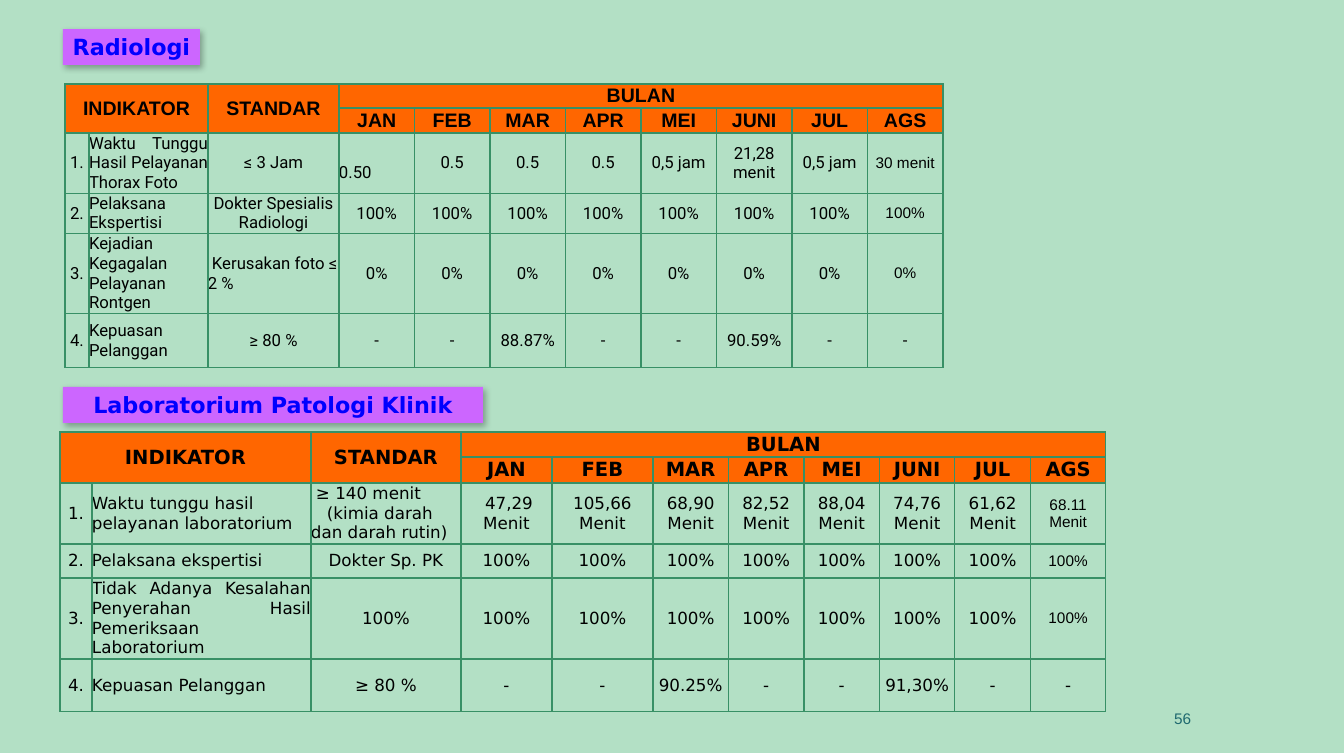
from lxml import etree
from pptx import Presentation
from pptx import util as u
from pptx.dml.color import RGBColor
from pptx.enum import shapes, text
from pptx.oxml.ns import qn

PX = 9108
COLOR = {"page": "B3E0C5", "label": "CC66FF", "title": "0000FF", "head": "FF6600",
         "line": "389066", "ink": "000000", "number": "1F696F"}
MONTHS = ["JAN", "FEB", "MAR", "APR", "MEI", "JUNI", "JUL", "AGS"]
HEAD = [["INDIKATOR", "", "STANDAR", "BULAN"] + [""] * 7, [""] * 3 + MONTHS]
LABELS = [("Radiologi", 63, 29, 137, 36),
          ("Laboratorium Patologi Klinik", 63, 387, 420, 36)]
TABLES = [
    {"at": (65, 84), "fonts": ("Arial", "Roboto"),
     "cols": [24, 119, 131], "months": 604,
     "rows": [24, 25, 60, 40, 80, 54],
     "body": [
         ["1.", "Waktu Tunggu Hasil Pelayanan Thorax Foto", "≤ 3 Jam", "0.50",
          "0.5", "0.5", "0.5", "0,5 jam", "21,28 menit", "0,5 jam", "30 menit"],
         ["2.", "Pelaksana Ekspertisi", "Dokter Spesialis Radiologi"] + ["100%"] * 8,
         ["3.", "Kejadian Kegagalan Pelayanan Rontgen", "Kerusakan foto ≤ 2 %"]
         + ["0%"] * 8,
         ["4.", "Kepuasan Pelanggan", "≥ 80 %", "-", "-", "88.87%",
          "-", "-", "90.59%", "-", "-"]],
     "special": {(2, 3): {"align": "l", "top": 19},
                 (4, 2): {"align": "l", "indents": [4]}}},
    {"at": (60, 432), "fonts": ("DejaVu Sans", "DejaVu Sans"),
     "cols": [32, 219, 150, 91, 101], "months": 453,
     "rows": [25, 26, 61, 34, 81, 53],
     "body": [
         ["1.", "Waktu tunggu hasil pelayanan laboratorium",
          "≥ 140 menit\n(kimia darah dan darah rutin)", "47,29 Menit",
          "105,66 Menit", "68,90 Menit", "82,52 Menit", "88,04 Menit",
          "74,76 Menit", "61,62 Menit", "68.11 Menit"],
         ["2.", "Pelaksana ekspertisi", "Dokter Sp. PK"] + ["100%"] * 8,
         ["3.", "Tidak Adanya Kesalahan Penyerahan Hasil Pemeriksaan Laboratorium"]
         + ["100%"] * 9,
         ["4.", "Kepuasan Pelanggan", "≥ 80 %", "-", "-", "90.25%",
          "-", "-", "91,30%", "-", "-"]],
     "special": {(2, 1): {"align": "l"},
                 (2, 2): {"align": "l", "indents": [5, 16]},
                 (2, 3): {"indents": [5]}}},
]
ALIGN = {"l": text.PP_ALIGN.LEFT, "c": text.PP_ALIGN.CENTER,
         "r": text.PP_ALIGN.RIGHT, "j": text.PP_ALIGN.JUSTIFY}


def rgb(name):
    return RGBColor.from_string(COLOR[name])


def write(frame, words, size=12, font="Arial", color="ink", bold=False,
          align="c", indents=()):
    for i, line in enumerate(words.split("\n")):
        para = frame.paragraphs[0] if i == 0 else frame.add_paragraph()
        para.alignment = ALIGN[align]
        if i < len(indents):
            props = para._p.get_or_add_pPr()
            props.set("marL", "0")
            props.set("indent", str(indents[i] * PX))
        run = para.add_run()
        run.text = line
        run.font.size = u.Pt(size)
        run.font.name = font
        run.font.bold = bold
        run.font.color.rgb = rgb(color)


def add_box(slide, place):
    box = slide.shapes.add_textbox(*[n * PX for n in place])
    box.text_frame.word_wrap = True
    box.text_frame.vertical_anchor = text.MSO_ANCHOR.MIDDLE
    return box


def add_label(slide, words, *place):
    box = slide.shapes.add_shape(shapes.MSO_SHAPE.RECTANGLE, *[n * PX for n in place])
    box.fill.solid()
    box.fill.fore_color.rgb = rgb("label")
    box.line.fill.background()
    box.shadow.inherit = False
    effect = box._element.spPr.find(qn("a:effectLst"))
    shade = etree.SubElement(effect, qn("a:outerShdw"), blurRad=str(u.Pt(4.5)),
                             dist=str(u.Pt(2.6)), dir=str(53 * 60000),
                             algn="tl", rotWithShape="0")
    tint = etree.SubElement(shade, qn("a:srgbClr"), val=COLOR["ink"])
    etree.SubElement(tint, qn("a:alpha"), val="30000")
    frame = box.text_frame
    frame.word_wrap = False
    frame.vertical_anchor = text.MSO_ANCHOR.MIDDLE
    frame.margin_left = frame.margin_right = 9 * PX
    frame.margin_top = frame.margin_bottom = 4 * PX
    write(frame, words, size=16, font="DejaVu Sans", color="title", bold=True)


def add_lines(cell):
    props = cell._tc.get_or_add_tcPr()
    for side in ("lnL", "lnR", "lnT", "lnB"):
        line = etree.SubElement(props, qn("a:" + side), w=str(u.Pt(1)))
        fill = etree.SubElement(line, qn("a:solidFill"))
        etree.SubElement(fill, qn("a:srgbClr"), val=COLOR["line"])


def get_style(row, col, words, fonts):
    if row < 2:
        return {"size": 14, "font": fonts[0], "bold": True}
    if col == 10 and words != "-":
        return {"size": 11, "font": "Arial"}
    return {"font": fonts[1], "align": "j" if col == 1 else "c"}


def add_grid(slide, data):
    cells = HEAD + data["body"]
    left = 11 - len(data["cols"])
    wide = [n * PX for n in data["cols"]] + [data["months"] * PX // left] * left
    high = [n * PX for n in data["rows"]]
    x, y = data["at"]
    grid = slide.shapes.add_table(len(high), len(wide), x * PX, y * PX,
                                  sum(wide), sum(high)).table
    grid.first_row = grid.horz_banding = False
    for col, size in zip(grid.columns, wide):
        col.width = size
    for row, size in zip(grid.rows, high):
        row.height = size
    for start, end in (((0, 0), (1, 1)), ((0, 2), (1, 2)), ((0, 3), (0, 10))):
        grid.cell(*start).merge(grid.cell(*end))
    for r, row in enumerate(cells):
        for c, words in enumerate(row):
            cell = grid.cell(r, c)
            add_lines(cell)
            if r < 2:
                cell.fill.solid()
                cell.fill.fore_color.rgb = rgb("head")
            else:
                cell.fill.background()
            if cell.is_spanned:
                continue
            style = get_style(r, c, words, data["fonts"])
            style.update(data["special"].get((r, c), {}))
            cell.margin_left = cell.margin_right = cell.margin_bottom = 0
            cell.margin_top = style.pop("top", 0) * PX
            cell.vertical_anchor = text.MSO_ANCHOR.MIDDLE
            write(cell.text_frame, words, **style)


def main():
    deck = Presentation()
    deck.slide_width, deck.slide_height = 1344 * PX, 753 * PX
    slide = deck.slides.add_slide(deck.slide_layouts[6])
    slide.background.fill.solid()
    slide.background.fill.fore_color.rgb = rgb("page")
    number = add_box(slide, (888, 698, 313, 40))
    write(number.text_frame, "56", size=11, color="number", align="r")
    for label in LABELS:
        add_label(slide, *label)
    for data in TABLES:
        add_grid(slide, data)
    deck.save("out.pptx")


if __name__ == "__main__":
    main()
